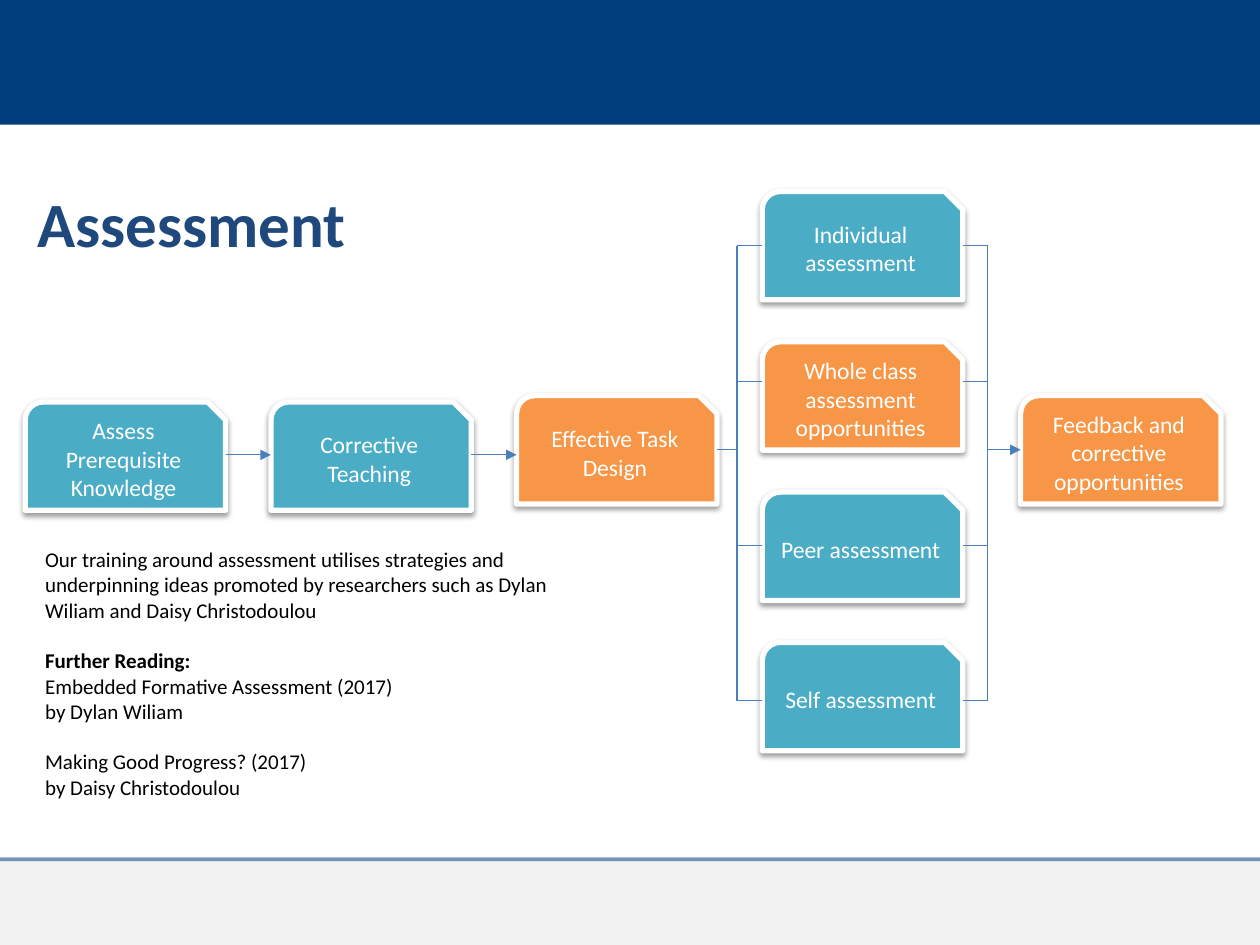
from pptx import Presentation
from pptx.dml.color import RGBColor
from pptx.enum.shapes import MSO_CONNECTOR as Connector, MSO_SHAPE as Shape
from pptx.enum.text import MSO_ANCHOR as Anchor, PP_ALIGN as Align
from pptx.oxml.ns import qn
from pptx.util import Inches, Pt
from lxml.etree import SubElement

COLORS = {
    "navy": "003E7E", "grey": "808080", "title": "1F497D", "teal": "4BACC6",
    "orange": "F79646", "line": "4B7EBC", "white": "FFFFFF", "black": "000000",
}
FONT = "Calibri"
BOX_WIDTH, BOX_HEIGHT = 1.59, 0.86


def rgb(name):
    return RGBColor.from_string(COLORS[name])


def set_alpha(fill, percent):
    color = fill._xPr.find(qn("a:solidFill"))[0]
    SubElement(color, qn("a:alpha"), val=str(percent * 1000))


def add_run(paragraph, text, size, color, bold=False):
    run = paragraph.add_run()
    run.text = text
    run.font.name = FONT
    run.font.size = Pt(size)
    run.font.bold = bold
    run.font.color.rgb = rgb(color)


def add_line(slide, start, end, color="line", width=0.75, arrow=False):
    line = slide.shapes.add_connector(
        Connector.STRAIGHT, *map(Inches, (*start, *end)))
    line.line.color.rgb = rgb(color)
    line.line.width = Pt(width)
    if arrow:
        SubElement(line.line._get_or_add_ln(), qn("a:tailEnd"), type="triangle")
    SubElement(line._element.spPr, qn("a:effectLst"))
    return line


def add_band(slide, box, color):
    band = slide.shapes.add_shape(Shape.RECTANGLE, *map(Inches, box))
    band.shadow.inherit = False
    band.fill.solid()
    band.fill.fore_color.rgb = rgb(color)
    band.line.fill.background()
    return band


def add_frame(slide, width, height):
    header, footer = 0.99, 0.68
    top = height - footer
    add_band(slide, (0, 0, width, header), "navy")
    set_alpha(add_band(slide, (0, top, width, footer), "grey").fill, 10)
    rule = add_line(slide, (0, top), (width, top), "navy", 2.25)
    set_alpha(rule.line.fill, 52)


def add_title(slide, box, text):
    title = slide.shapes.add_textbox(*map(Inches, box))
    frame = title.text_frame
    frame.word_wrap = True
    frame.vertical_anchor = Anchor.MIDDLE
    add_run(frame.paragraphs[0], text, 36, "title", bold=True)


def add_shadow(shape):
    shape.shadow.inherit = False
    effects = shape._element.spPr.find(qn("a:effectLst"))
    shadow = SubElement(
        effects, qn("a:outerShdw"), blurRad=str(Pt(3.1)), dist=str(Pt(1.6)),
        dir="5400000", rotWithShape="0")
    color = SubElement(shadow, qn("a:srgbClr"), val=COLORS["black"])
    SubElement(color, qn("a:alpha"), val="38000")


def add_step(slide, left, top, text, color):
    step = slide.shapes.add_shape(
        Shape.SNIP_ROUND_RECTANGLE,
        *map(Inches, (left, top, BOX_WIDTH, BOX_HEIGHT)))
    step.fill.solid()
    step.fill.fore_color.rgb = rgb(color)
    step.line.color.rgb = rgb("white")
    step.line.width = Pt(3)
    add_shadow(step)
    frame = step.text_frame
    frame.word_wrap = True
    frame.vertical_anchor = Anchor.MIDDLE
    paragraph = frame.paragraphs[0]
    paragraph.alignment = Align.CENTER
    add_run(paragraph, text, 13.5, "white")


def add_flow(slide, left, top):
    column = [left + 1.95 * index for index in range(4)]
    feedback_left = left + 7.9
    row_top = top + 1.62
    lower_top = row_top + 0.05
    for step in (
        (column[0], lower_top, "Assess Prerequisite Knowledge", "teal"),
        (column[1], lower_top, "Corrective Teaching", "teal"),
        (column[2], row_top, "Effective Task Design", "orange"),
        (feedback_left, row_top, "Feedback and corrective opportunities", "orange"),
    ):
        add_step(slide, *step)

    options = (
        ("Individual assessment", "teal"),
        ("Whole class assessment opportunities", "orange"),
        ("Peer assessment", "teal"),
        ("Self assessment", "teal"),
    )
    for index, (text, color) in enumerate(options):
        add_step(slide, column[3], top + 1.193 * index, text, color)

    arrow_y = top + 2.09
    for start, end in zip(column[:2], column[1:3]):
        add_line(slide, (start + BOX_WIDTH, arrow_y), (end, arrow_y), arrow=True)

    options_right = column[3] + BOX_WIDTH
    bus_left, bus_right = column[3] - 0.2, options_right + 0.2
    branches = [top + offset for offset in (0.43, 1.51, 2.81, 4.04)]
    for bus, edge in ((bus_left, column[3]), (bus_right, options_right)):
        add_line(slide, (bus, branches[0]), (bus, branches[-1]))
        for y in branches:
            add_line(slide, (bus, y), (edge, y))
    middle = row_top + BOX_HEIGHT / 2
    add_line(slide, (column[2] + BOX_WIDTH, middle), (bus_left, middle))
    add_line(slide, (bus_right, middle), (feedback_left, middle), arrow=True)


def add_reading(slide, box):
    frame = slide.shapes.add_textbox(*map(Inches, box)).text_frame
    frame.word_wrap = True
    lines = (
        ("Our training around assessment utilises strategies and underpinning "
         "ideas promoted by researchers such as Dylan Wiliam and Daisy "
         "Christodoulou", False, 0),
        ("Further Reading:", True, 14.6),
        ("Embedded Formative Assessment (2017)", False, 0),
        ("by Dylan Wiliam", False, 0),
        ("Making Good Progress? (2017)", False, 14.6),
        ("by Daisy Christodoulou", False, 0),
    )
    for index, (text, bold, gap) in enumerate(lines):
        paragraph = frame.add_paragraph() if index else frame.paragraphs[0]
        if gap:
            paragraph.space_before = Pt(gap)
        add_run(paragraph, text, 12, "black", bold)


def main():
    width, height = 10, 7.5
    presentation = Presentation()
    presentation.slide_width = Inches(width)
    presentation.slide_height = Inches(height)
    slide = presentation.slides.add_slide(presentation.slide_layouts[6])
    add_frame(slide, width, height)
    add_title(slide, (0.2, 1.22, 8.62, 1.09), "Assessment")
    add_flow(slide, 0.2, 1.52)
    add_reading(slide, (0.26, 4.29, 4.63, 2.3))
    presentation.save("out.pptx")


if __name__ == "__main__":
    main()
